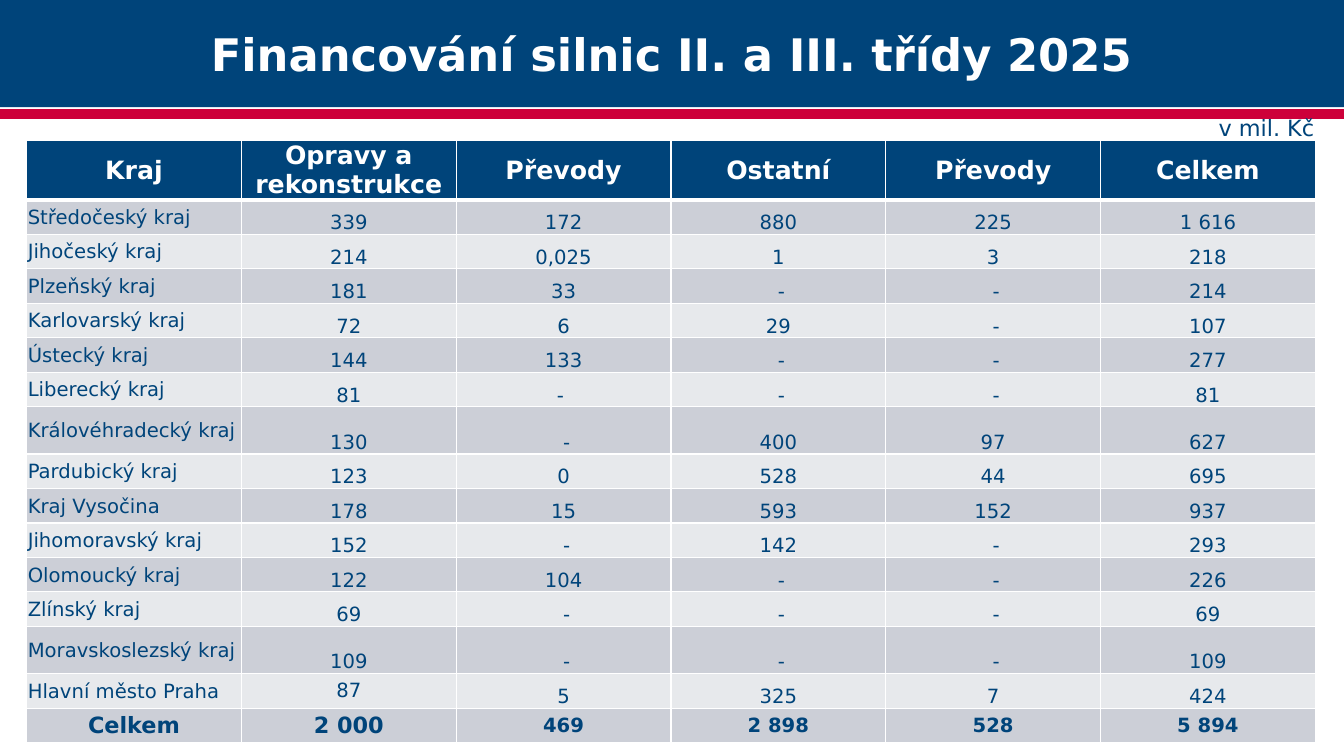
import pptx
import pptx.dml.color
import pptx.enum.shapes
import pptx.enum.text
import pptx.oxml
import pptx.oxml.ns
import pptx.util

Cm = pptx.util.Cm
ALIGN = pptx.enum.text.PP_ALIGN
ANCHOR = pptx.enum.text.MSO_ANCHOR

FONT = "DejaVu Sans"
NAVY, RED, WHITE = "00447A", "CD003A", "FFFFFF"
BANDS = ("CCCFD7", "E7E9EC")
SLIDE_W, SLIDE_H = 33.87, 19.05

HEADER = ["Kraj", "Opravy a rekonstrukce", "Převody", "Ostatní", "Převody", "Celkem"]
REGIONS = [
    ["Středočeský kraj", "339", "172", "880", "225", "1 616"],
    ["Jihočeský kraj", "214", "0,025", "1", "3", "218"],
    ["Plzeňský kraj", "181", "33", " -", " -", "214"],
    ["Karlovarský kraj", "72", "6", "29", " -", "107"],
    ["Ústecký kraj", "144", "133", " -", " -", "277"],
    ["Liberecký kraj", "81", "- ", " -", " -", "81"],
    ["Královéhradecký kraj", "130", " -", "400", "97", "627"],
    ["Pardubický kraj", "123", "0", "528", "44", "695"],
    ["Kraj Vysočina", "178", "15", "593", "152", "937"],
    ["Jihomoravský kraj", "152", " -", "142", " -", "293"],
    ["Olomoucký kraj", "122", "104", " -", " -", "226"],
    ["Zlínský kraj", "69", " -", " -", " -", "69"],
    ["Moravskoslezský kraj", "109", " -", " -", " -", "109"],
    ["Hlavní město Praha", "87", "5", "325", "7", "424"],
]
TOTAL = ["Celkem", "2 000", "469", "2 898", "528", "5 894"]
TALL_REGIONS = ("Královéhradecký kraj", "Moravskoslezský kraj")


def color(value):
    return pptx.dml.color.RGBColor.from_string(value)


def write(tf, text, size, ink, align=ALIGN.CENTER, bold=False):
    p = tf.paragraphs[0]
    p.alignment = align
    r = p.add_run()
    r.text = text
    r.font.name = FONT
    r.font.size = pptx.util.Pt(size)
    r.font.bold = bold
    r.font.color.rgb = color(ink)


def add_band(s, x, y, w, h, fill):
    sp = s.shapes.add_shape(
        pptx.enum.shapes.MSO_SHAPE.RECTANGLE, Cm(x), Cm(y), Cm(w), Cm(h))
    sp.shadow.inherit = False
    sp.fill.solid()
    sp.fill.fore_color.rgb = color(fill)
    sp.line.fill.background()
    return sp


def add_title(s, x, y, w, h):
    add_band(s, x, y + h + 0.05, w, 0.25, RED)
    tf = add_band(s, x, y, w, h, NAVY).text_frame
    tf.word_wrap = True
    tf.vertical_anchor = ANCHOR.MIDDLE
    write(tf, "Financování silnic II. a III. třídy 2025", 32, WHITE, bold=True)


def add_unit(s, x, y, w, h):
    tf = s.shapes.add_textbox(Cm(x), Cm(y), Cm(w), Cm(h)).text_frame
    tf.word_wrap = True
    write(tf, "v mil. Kč", 16, NAVY, ALIGN.RIGHT)


def set_borders(cell, **widths):
    tcPr = cell._tc.get_or_add_tcPr()
    for side in "LRTB":
        width = pptx.util.Pt(widths.get(side, 1))
        tcPr.append(pptx.oxml.parse_xml(
            f'<a:ln{side} {pptx.oxml.ns.nsdecls("a")} w="{width}"><a:solidFill>'
            f'<a:srgbClr val="{WHITE}"/></a:solidFill></a:ln{side}>'))


def style_cell(cell, fill, anchor, inset=0.03):
    cell.fill.solid()
    cell.fill.fore_color.rgb = color(fill)
    cell.vertical_anchor = anchor
    cell.margin_left = cell.margin_right = cell.margin_top = Cm(inset)
    cell.margin_bottom = 0


def fill_cell(cell, i, j, text):
    last_region = len(REGIONS)
    if i == 0:
        set_borders(cell, B=3)
        style_cell(cell, NAVY, ANCHOR.MIDDLE)
        write(cell.text_frame, text, 18, WHITE, bold=True)
        return
    set_borders(cell, T=3 if i == 1 else 1)
    band = BANDS[(i - 1) % 2]
    if i > last_region:
        style_cell(cell, band, ANCHOR.MIDDLE)
        write(cell.text_frame, text, 16 if j < 2 else 14, NAVY, bold=True)
    elif j == 0:
        style_cell(cell, band, ANCHOR.MIDDLE)
        write(cell.text_frame, text, 14, NAVY, ALIGN.LEFT)
    else:
        centred = i == last_region and j == 1
        style_cell(cell, band, ANCHOR.MIDDLE if centred else ANCHOR.BOTTOM,
                   0 if i == last_region else 0.03)
        write(cell.text_frame, text, 14, NAVY)


def add_funding_table(s, x, y, w, h):
    rows = [HEADER, *REGIONS, TOTAL]
    header_h, tall_h = 1.5, 1.19
    plain_rows = len(rows) - 1 - len(TALL_REGIONS)
    plain_h = (h - header_h - len(TALL_REGIONS) * tall_h) / plain_rows
    table = s.shapes.add_table(
        len(rows), len(HEADER), Cm(x), Cm(y), Cm(w), Cm(h)).table
    for column in table.columns:
        column.width = Cm(w / len(HEADER))
    for i, values in enumerate(rows):
        tall = values[0] in TALL_REGIONS
        table.rows[i].height = Cm(header_h if i == 0 else tall_h if tall else plain_h)
        for j, text in enumerate(values):
            fill_cell(table.cell(i, j), i, j, text)


def main():
    prs = pptx.Presentation()
    prs.slide_width, prs.slide_height = Cm(SLIDE_W), Cm(SLIDE_H)
    s = prs.slides.add_slide(prs.slide_layouts[6])
    add_title(s, 0, 0, SLIDE_W, 2.7)
    add_band(s, 0, 3.25, SLIDE_W, SLIDE_H - 3.25, WHITE)
    add_funding_table(s, 0.67, 3.53, 32.48, 15.19)
    add_unit(s, 29.87, 2.74, 3.5, 0.94)
    prs.save("out.pptx")


if __name__ == "__main__":
    main()
